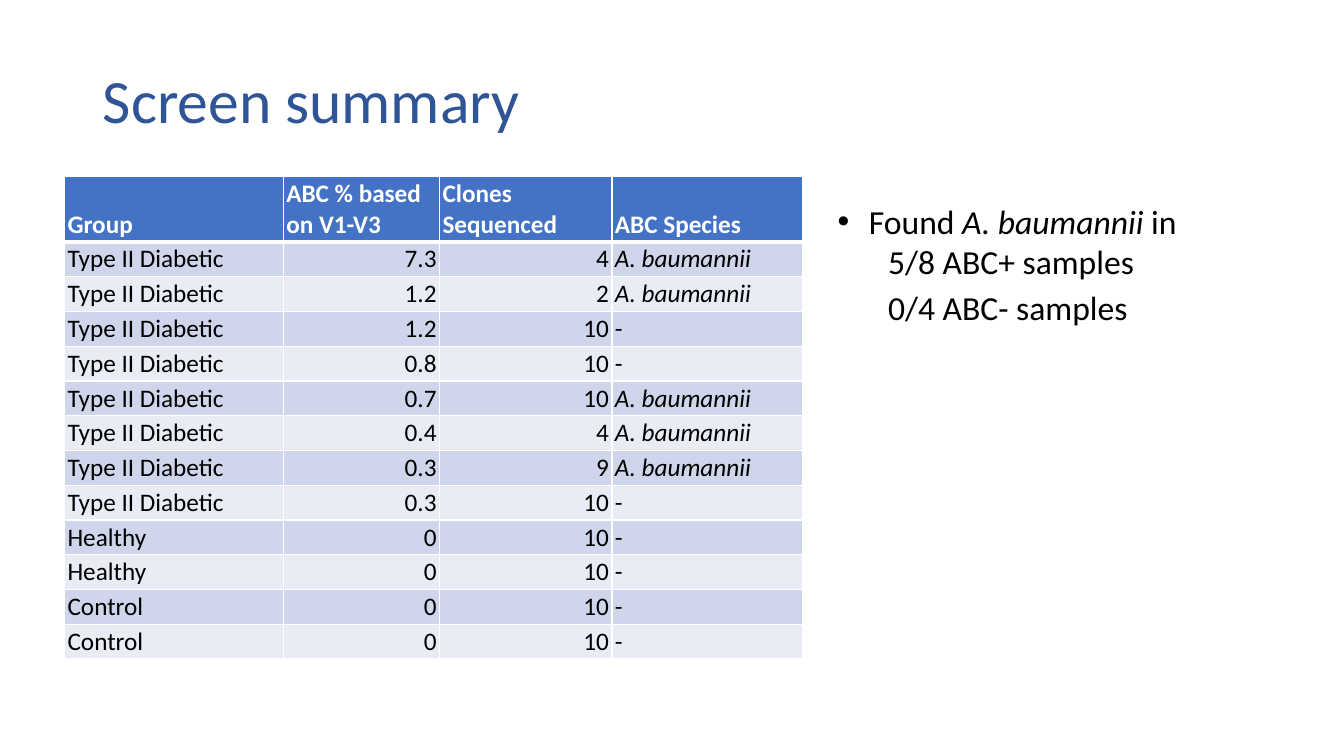
from dataclasses import dataclass
from typing import NamedTuple

from pptx import Presentation
from pptx.dml.color import RGBColor
from pptx.enum.text import MSO_ANCHOR, PP_ALIGN
from pptx.oxml import parse_xml
from pptx.oxml.ns import nsdecls
from pptx.slide import Slide
from pptx.table import _Cell
from pptx.text.text import _Paragraph, _Run
from pptx.util import Pt

SCALE = 9144  # 100 px to the inch
FONT = "Calibri"
BLUE, NAVY, WHITE, BLACK = "4472C4", "2F5597", "FFFFFF", "000000"
BANDS = ("CFD5EA", "E9EBF5")
SPECIES = "A. baumannii"


@dataclass(frozen=True)
class Column:
    head: str
    width: int
    align: PP_ALIGN


class Sample(NamedTuple):
    group: str
    share: str
    clones: str
    species: str = "-"


class Piece(NamedTuple):
    text: str
    italic: bool = False


class Point(NamedTuple):
    pieces: tuple[Piece, ...]
    left: int
    hang: int = 0
    gap: int = 0


COLUMNS = (
    Column("Group", 217, PP_ALIGN.LEFT),
    Column("ABC % based on V1-V3", 155, PP_ALIGN.RIGHT),
    Column("Clones Sequenced", 171, PP_ALIGN.RIGHT),
    Column("ABC Species", 189, PP_ALIGN.LEFT),
)
TYPE2 = "Type II Diabetic"
SAMPLES = (
    Sample(TYPE2, "7.3", "4", SPECIES),
    Sample(TYPE2, "1.2", "2", SPECIES),
    Sample(TYPE2, "1.2", "10"),
    Sample(TYPE2, "0.8", "10"),
    Sample(TYPE2, "0.7", "10", SPECIES),
    Sample(TYPE2, "0.4", "4", SPECIES),
    Sample(TYPE2, "0.3", "9", SPECIES),
    Sample(TYPE2, "0.3", "10"),
    Sample("Healthy", "0", "10"),
    Sample("Healthy", "0", "10"),
    Sample("Control", "0", "10"),
    Sample("Control", "0", "10"),
)
POINTS = (
    Point((Piece("Found "), Piece(SPECIES + " ", True), Piece("in")), 31, 31),
    Point((Piece("5/8 ABC+ samples"),), 50),
    Point((Piece("0/4 ABC- samples"),), 50, gap=4),
)


def px(size: int) -> int:
    return size * SCALE


def paint(code: str) -> RGBColor:
    return RGBColor.from_string(code)


def style(run: _Run, size: int, color: str, bold: bool = False, italic: bool = False) -> None:
    font = run.font
    font.name, font.size = FONT, Pt(size)
    font.bold, font.italic = bold, italic
    font.color.rgb = paint(color)


def border(cell: _Cell, top: int, bottom: int) -> None:
    props = cell._tc.get_or_add_tcPr()
    for side, width in (("L", 1), ("R", 1), ("T", top), ("B", bottom)):
        props.append(parse_xml(
            f'<a:ln{side} {nsdecls("a")} w="{Pt(width)}"><a:solidFill>'
            f'<a:srgbClr val="{WHITE}"/></a:solidFill></a:ln{side}>'))


def indent(para: _Paragraph, left: int, hang: int) -> None:
    props = para._p.get_or_add_pPr()
    props.set("marL", str(px(left)))
    props.set("indent", str(-px(hang)))
    if hang:
        props.append(parse_xml(f'<a:buFont {nsdecls("a")} typeface="Arial"/>'))
        props.append(parse_xml(f'<a:buChar {nsdecls("a")} char="•"/>'))


def add_title(slide: Slide) -> None:
    title = slide.shapes.title
    title.left, title.top, title.width, title.height = map(px, (92, 30, 1150, 145))
    frame = title.text_frame
    frame.text = "Screen summary"
    frame.vertical_anchor = MSO_ANCHOR.MIDDLE
    para = frame.paragraphs[0]
    para.alignment, para.line_spacing = PP_ALIGN.LEFT, 0.9
    style(para.runs[0], 44, NAVY)


def fill_cell(cell: _Cell, text: str, row: int, align: PP_ALIGN) -> None:
    head = row == 0
    border(cell, 3 if row == 1 else 1, 3 if head else 1)
    cell.fill.solid()
    cell.fill.fore_color.rgb = paint(BLUE if head else BANDS[(row - 1) % 2])
    cell.margin_left = cell.margin_right = px(3)
    cell.margin_top = cell.margin_bottom = px(2)
    cell.vertical_anchor = MSO_ANCHOR.BOTTOM
    cell.text_frame.text = text
    para = cell.text_frame.paragraphs[0]
    para.alignment = PP_ALIGN.LEFT if head else align
    style(para.runs[0], 18, WHITE if head else BLACK, head, text == SPECIES)


def add_grid(slide: Slide) -> None:
    rows = (tuple(col.head for col in COLUMNS), *SAMPLES)
    width = sum(col.width for col in COLUMNS)
    table = slide.shapes.add_table(
        len(rows), len(COLUMNS), px(64), px(175), px(width), px(478)).table
    for c, col in enumerate(COLUMNS):
        table.columns[c].width = px(col.width)
    for r, row in enumerate(rows):
        table.rows[r].height = px(34 if r else 65)
        for c, text in enumerate(row):
            fill_cell(table.cell(r, c), text, r, COLUMNS[c].align)


def add_points(slide: Slide) -> None:
    frame = slide.shapes.add_textbox(px(821), px(194), px(449), px(138)).text_frame
    frame.word_wrap = True
    for i, point in enumerate(POINTS):
        para = frame.add_paragraph() if i else frame.paragraphs[0]
        para.level = 1 if i else 0
        para.space_before = Pt(point.gap)
        indent(para, point.left, point.hang)
        for piece in point.pieces:
            run = para.add_run()
            run.text = piece.text
            style(run, 24, BLACK, italic=piece.italic)


def main() -> None:
    deck = Presentation()
    deck.slide_width, deck.slide_height = px(1333), px(750)
    slide = deck.slides.add_slide(deck.slide_layouts[5])
    # Heading
    add_title(slide)
    # Table of samples
    add_grid(slide)
    # Findings
    add_points(slide)
    deck.save("out.pptx")


if __name__ == "__main__":
    main()
